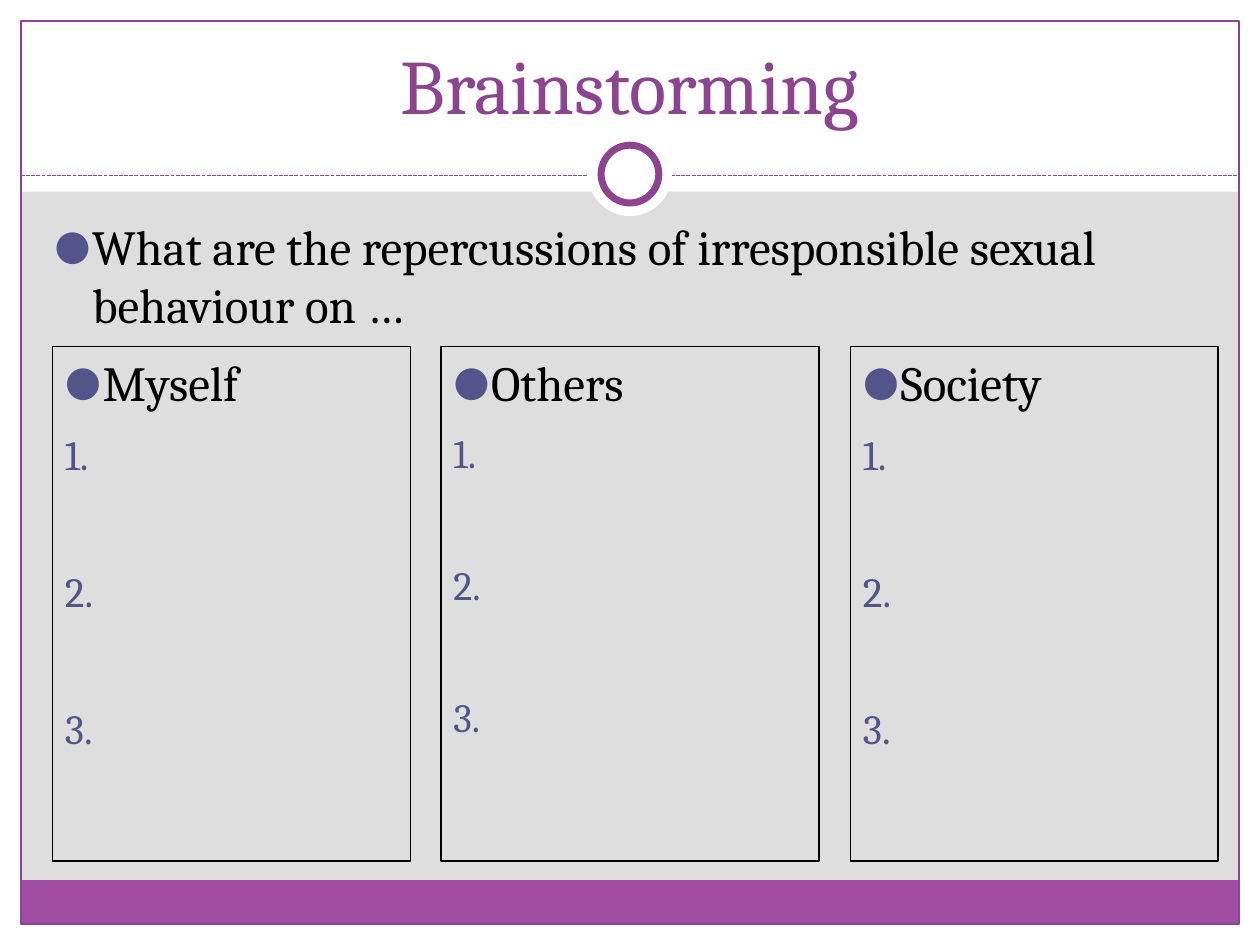
from lxml.etree import SubElement
from pptx import Presentation
from pptx.dml.color import RGBColor
from pptx.enum.dml import MSO_LINE
from pptx.enum.shapes import MSO_CONNECTOR, MSO_SHAPE
from pptx.enum.text import MSO_ANCHOR, PP_ALIGN
from pptx.oxml.ns import qn
from pptx.util import Pt

WHITE = RGBColor(0xFF, 0xFF, 0xFF)
BLACK = RGBColor(0x00, 0x00, 0x00)
GREY = RGBColor(0xDE, 0xDE, 0xDE)
PURPLE = RGBColor(0x8D, 0x44, 0x90)
BAND_PURPLE = RGBColor(0xA0, 0x4D, 0xA3)
BULLET_BLUE = RGBColor(0x53, 0x54, 0x8A)
FONT = "Cambria"


def add_box(kind, left, top, width, height, fill=None, line=None, line_width=0.75):
    shape = slide.shapes.add_shape(kind, Pt(left), Pt(top), Pt(width), Pt(height))
    shape.shadow.inherit = False
    if fill is None:
        shape.fill.background()
    else:
        shape.fill.solid()
        shape.fill.fore_color.rgb = fill
    if line is None:
        shape.line.fill.background()
    else:
        shape.line.color.rgb = line
        shape.line.width = Pt(line_width)
    return shape


def write_item(paragraph, text, size, space_before, indent, number=None):
    paragraph.text = text
    paragraph.alignment = PP_ALIGN.LEFT
    paragraph.space_before = Pt(space_before)
    properties = paragraph._p.get_or_add_pPr()
    properties.set("marL", str(Pt(indent)))
    properties.set("indent", str(-Pt(indent)))
    color = SubElement(properties, qn("a:buClr"))
    SubElement(color, qn("a:srgbClr"), val=str(BULLET_BLUE))
    SubElement(properties, qn("a:buSzPct"), val="85000")
    SubElement(properties, qn("a:buFont"), typeface=FONT)
    if number is None:
        SubElement(properties, qn("a:buChar"), char="●")
    else:
        SubElement(properties, qn("a:buAutoNum"), type="arabicPeriod", startAt=str(number))
    paragraph.font.name = FONT
    paragraph.font.size = Pt(size)
    paragraph.font.color.rgb = BLACK


presentation = Presentation()
presentation.slide_width = Pt(720)
presentation.slide_height = Pt(540)
slide = presentation.slides.add_slide(presentation.slide_layouts[6])
slide.background.fill.solid()
slide.background.fill.fore_color.rgb = GREY

for left, top, width, height in [
    (0, 528, 720, 12),
    (0, 0, 720, 109.5),
    (0, 0, 12, 540),
    (708, 0, 12, 540),
]:
    add_box(MSO_SHAPE.RECTANGLE, left, top, width, height, WHITE)

add_box(MSO_SHAPE.RECTANGLE, 12, 503, 696, 25, BAND_PURPLE)
add_box(MSO_SHAPE.RECTANGLE, 12, 12, 696, 516, line=PURPLE)

divider = slide.shapes.add_connector(MSO_CONNECTOR.STRAIGHT, Pt(12), Pt(100.5), Pt(708), Pt(100.5))
divider.line.color.rgb = PURPLE
divider.line.width = Pt(0.75)
divider.line.dash_style = MSO_LINE.SQUARE_DOT
SubElement(divider._element.spPr, qn("a:effectLst"))

add_box(MSO_SHAPE.OVAL, 336, 75.5, 48, 48, WHITE)
add_box(MSO_SHAPE.OVAL, 343.5, 83, 33, 33, WHITE, PURPLE, 4)

title_frame = slide.shapes.add_textbox(Pt(24), Pt(18), Pt(672), Pt(60)).text_frame
title_frame.word_wrap = True
title_frame.vertical_anchor = MSO_ANCHOR.BOTTOM
title = title_frame.paragraphs[0]
title.text = "Brainstorming"
title.alignment = PP_ALIGN.CENTER
title.font.name = FONT
title.font.size = Pt(44)
title.font.color.rgb = PURPLE

question_frame = slide.shapes.add_textbox(Pt(24), Pt(120), Pt(670), Pt(83.5)).text_frame
question_frame.word_wrap = True
question = "What are the repercussions of irresponsible sexual behaviour on …"
write_item(question_frame.paragraphs[0], question, 28, 5.6, 21.6)

for heading, left, width, number_size in [
    ("Myself", 30, 204.5, 28),
    ("Others", 252, 216, 27),
    ("Society", 486, 210, 28),
]:
    column = add_box(MSO_SHAPE.RECTANGLE, left, 198, width, 294, line=BLACK)
    frame = column.text_frame
    frame.word_wrap = True
    frame.vertical_anchor = MSO_ANCHOR.TOP
    write_item(frame.paragraphs[0], heading, 28, 5.6, 21.6)
    for number in range(1, 4):
        gap = number_size * (0.2 if number == 1 else 1.6)
        write_item(frame.add_paragraph(), " ", number_size, gap, 21, number)

presentation.save("out.pptx")
